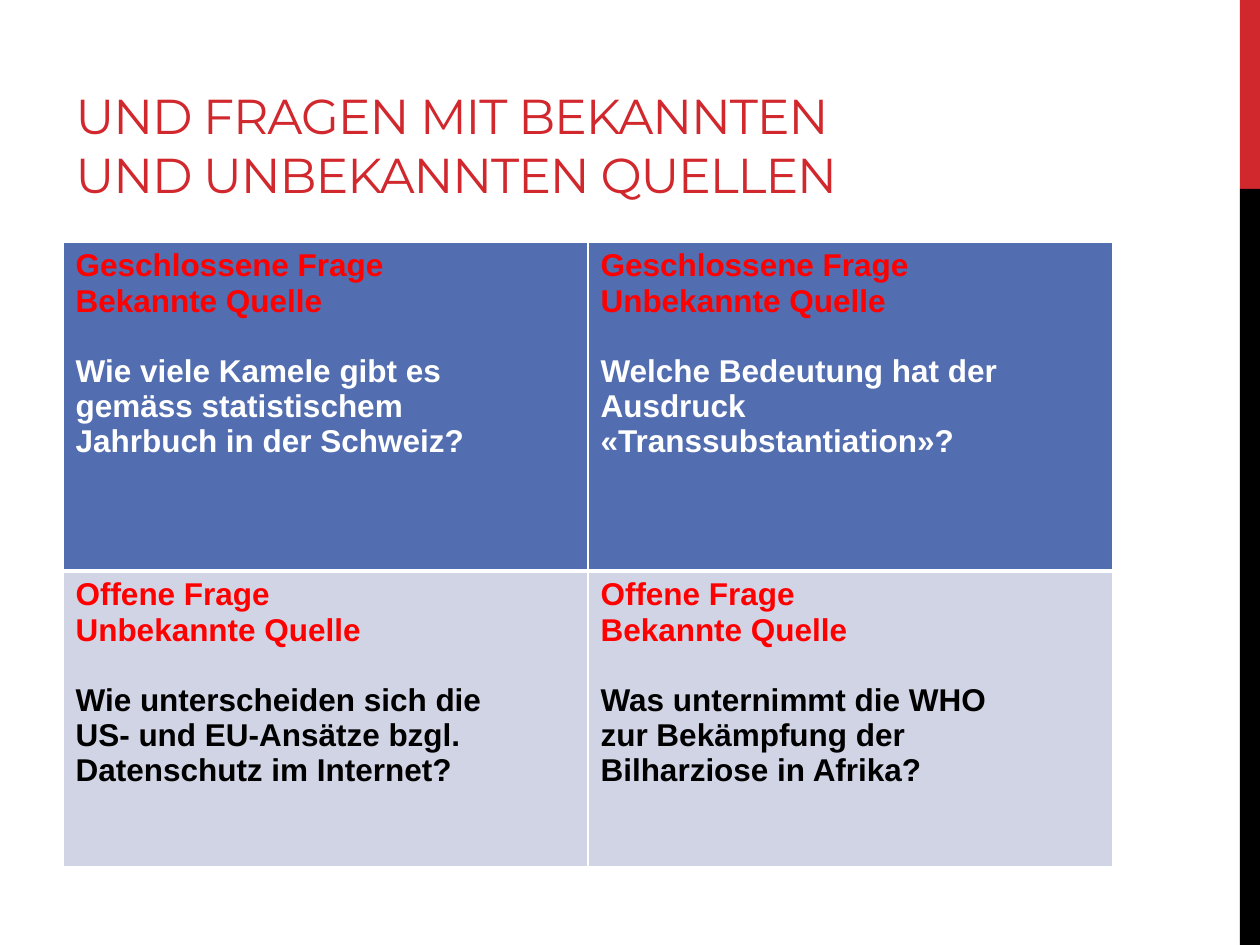
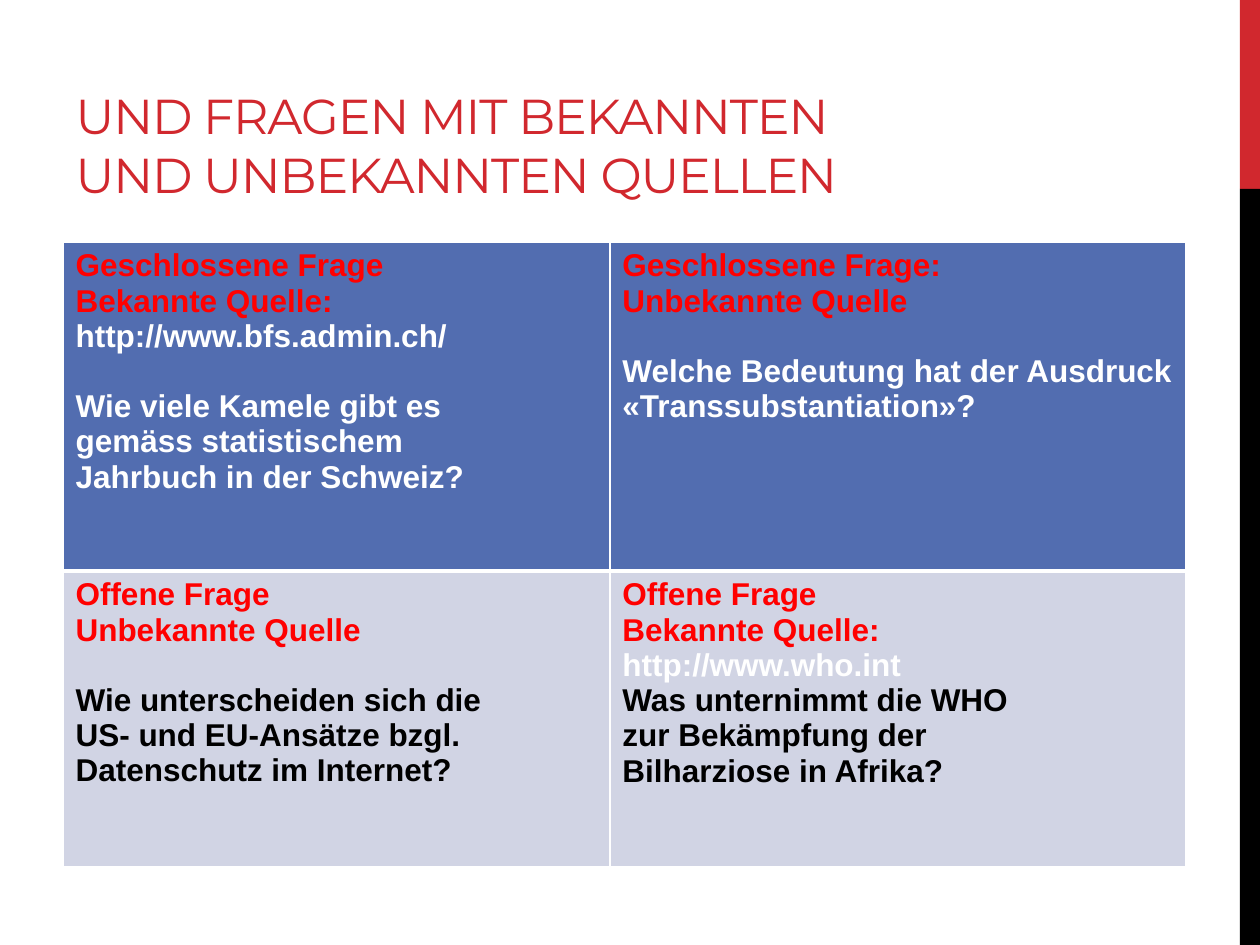
from dataclasses import dataclass

from lxml import etree
from pptx import Presentation
from pptx.dml.color import RGBColor
from pptx.enum.shapes import MSO_SHAPE
from pptx.enum.text import MSO_ANCHOR, MSO_AUTO_SIZE, PP_ALIGN
from pptx.oxml.ns import qn
from pptx.util import Pt

RECT = MSO_SHAPE.RECTANGLE
TOP, BOTTOM = MSO_ANCHOR.TOP, MSO_ANCHOR.BOTTOM
LEFT = PP_ALIGN.LEFT
NO_FIT = MSO_AUTO_SIZE.NONE
TITLE_ONLY = 5


@dataclass(frozen=True)
class Theme:
    accent: str = "D1282E"
    black: str = "000000"
    white: str = "FFFFFF"
    red: str = "FF0000"
    blue: str = "526DB0"
    pale: str = "D1D4E4"
    title_font: str = "Montserrat"
    body_font: str = "Arial"
    title_size: float = 28
    body_size: float = 18
    gap: float = 20


THEME = Theme()


def rgb(code):
    return RGBColor.from_string(code)


def write(frame, paras, font, size, bold=False, track=None):
    """Fill a frame; each paragraph is (space before, [(text, colour), ...])."""
    for i, (space, runs) in enumerate(paras):
        para = frame.paragraphs[0] if i == 0 else frame.add_paragraph()
        para.alignment = LEFT
        para.space_before = Pt(space)
        for text, color in runs:
            run = para.add_run()
            run.text = text
            run.font.name = font
            run.font.size = Pt(size)
            run.font.bold = bold
            run.font.color.rgb = rgb(color)
            if track is not None:
                run.font._element.set("spc", str(round(track * 100)))


class Deck:
    def __init__(self, theme):
        self.theme = theme
        self.prs = Presentation()
        self.prs.slide_width, self.prs.slide_height = Pt(720), Pt(540)
        self.slide = None

    def start(self, title):
        """Add a slide with the side band and its title."""
        t = self.theme
        layout = self.prs.slide_layouts[TITLE_ONLY]
        self.slide = self.prs.slides.add_slide(layout)
        self.bar(0, 108, t.accent)
        self.bar(108, 432, t.black)
        self.title(title)

    def bar(self, top, height, color):
        bar = self.slide.shapes.add_shape(
            RECT, Pt(708.5), Pt(top), Pt(11.5), Pt(height))
        bar.shadow.inherit = False
        bar.fill.solid()
        bar.fill.fore_color.rgb = rgb(color)
        bar.line.fill.background()

    def title(self, text):
        t = self.theme
        box = self.slide.shapes.title
        box.left, box.top, box.width, box.height = Pt(36), Pt(12), Pt(456), Pt(108)
        frame = box.text_frame
        frame.word_wrap = True
        frame.auto_size = NO_FIT
        frame.vertical_anchor = BOTTOM
        write(frame, [(0, [(text, t.accent)])], t.title_font, t.title_size,
              track=-0.6)

    def edge(self, cell, side, width):
        line = etree.SubElement(cell._tc.get_or_add_tcPr(), qn(f"a:ln{side}"),
                                w=str(Pt(width)))
        fill = etree.SubElement(line, qn("a:solidFill"))
        etree.SubElement(fill, qn("a:srgbClr"), val=self.theme.white)

    def cell(self, cell, row, head, ask):
        t = self.theme
        # Borders go before the fill; the rule between the rows is thicker
        for side in "LRTB":
            middle = side == ("B" if row == 0 else "T")
            self.edge(cell, side, 3 if middle else 1)
        cell.fill.solid()
        cell.fill.fore_color.rgb = rgb((t.blue, t.pale)[row])
        cell.vertical_anchor = TOP
        ink = (t.white, t.black)[row]
        # A closing web address takes the place of the gap in the lower row
        linked = head[-1].startswith("http")
        paras = [(0, [(text, t.red)]) for text in head]
        if linked:
            paras[-1] = (0, [(head[-1], t.white)])
            if row == 0:
                url = paras.pop()
                paras[-1] = (0, [(head[-2] + " ", t.red)] + url[1])
        first = 0 if linked and row == 1 else t.gap
        paras += [(0 if i else first, [(text, ink)])
                  for i, text in enumerate(ask)]
        write(cell.text_frame, paras, t.body_font, t.body_size, bold=True)

    def table(self, cols, heads, asks):
        rows = (188, 169)
        grid = self.slide.shapes.add_table(
            len(rows), len(cols), Pt(36), Pt(138.25),
            Pt(sum(cols)), Pt(sum(rows))).table
        grid.first_row = grid.horz_banding = False
        for col, width in zip(grid.columns, cols):
            col.width = Pt(width)
        for r, height in enumerate(rows):
            grid.rows[r].height = Pt(height)
            for c in range(len(cols)):
                self.cell(grid.cell(r, c), r, heads[r][c], asks[r][c])


TITLE = "UND FRAGEN MIT BEKANNTEN UND UNBEKANNTEN QUELLEN"

# Questions shared by both slides, by row and column
ASKS = [
    [["Wie viele Kamele gibt es", "gemäss statistischem",
      "Jahrbuch in der Schweiz?"],
     ["Welche Bedeutung hat der Ausdruck «Transsubstantiation»?"]],
    [["Wie unterscheiden sich die", "US- und EU-Ansätze bzgl.",
      "Datenschutz im Internet?"],
     ["Was unternimmt die WHO", "zur Bekämpfung der",
      "Bilharziose in Afrika?"]],
]

CLOSED, OPEN = "Geschlossene Frage", "Offene Frage"
KNOWN, UNKNOWN = "Bekannte Quelle", "Unbekannte Quelle"

# Column widths and cell headings of each slide
SLIDES = [
    ((300, 300),
     [[[CLOSED, KNOWN], [CLOSED, UNKNOWN]],
      [[OPEN, UNKNOWN], [OPEN, KNOWN]]]),
    ((312.5, 329),
     [[[CLOSED, KNOWN + ":", "http://www.bfs.admin.ch/"],
       [CLOSED + ":", UNKNOWN]],
      [[OPEN, UNKNOWN], [OPEN, KNOWN + ":", "http://www.who.int"]]]),
]


def main():
    deck = Deck(THEME)
    for cols, heads in SLIDES:
        deck.start(TITLE)
        deck.table(cols, heads, ASKS)
    deck.prs.save("out.pptx")


if __name__ == "__main__":
    main()
